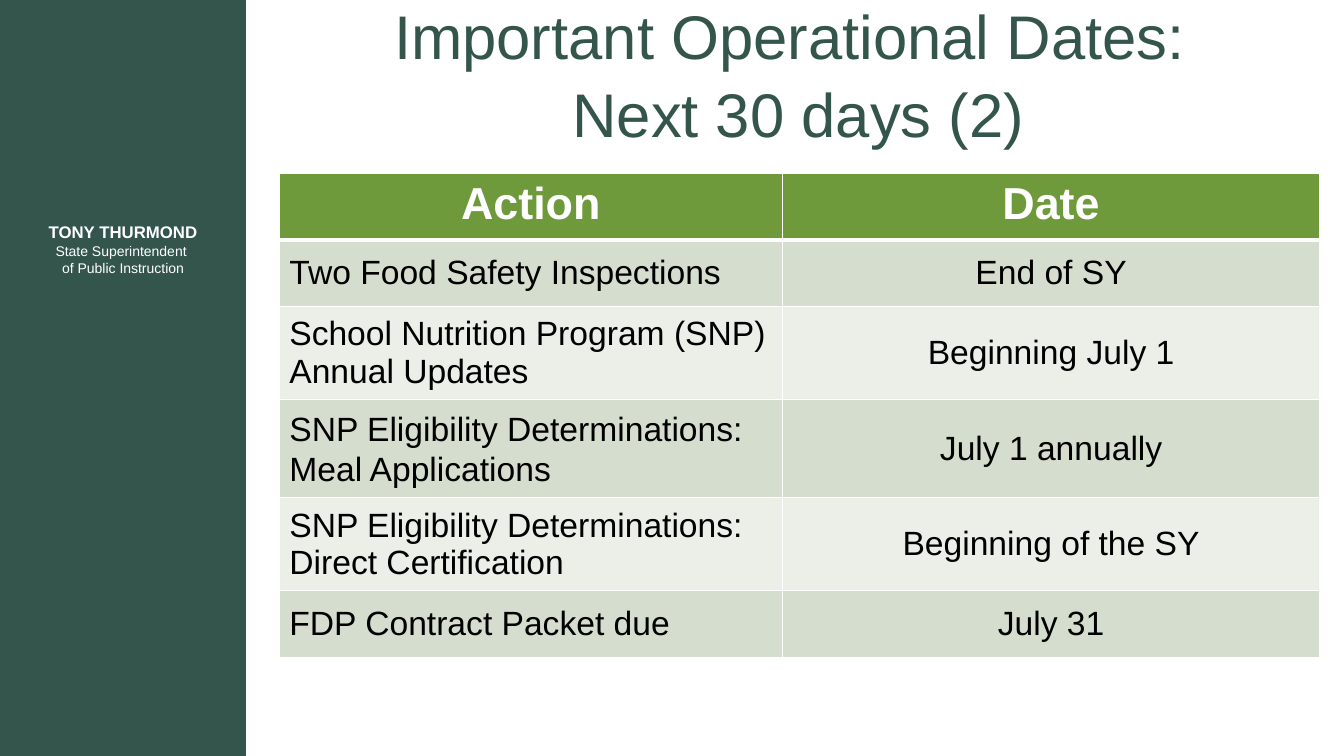
"""Build the slide of operational dates for the next 30 days."""
from dataclasses import dataclass

from lxml import etree
from pptx import Presentation
from pptx.dml.color import RGBColor
from pptx.enum import shapes, text
from pptx.oxml import ns
from pptx.util import Inches, Pt


@dataclass(frozen=True)
class Theme:
    font: str = "Arial"
    pine: str = "34554C"
    header: str = "6E9A3B"
    bands: tuple = ("D5DECE", "EBEFE8")
    white: str = "FFFFFF"
    black: str = "000000"
    title_size: int = 44
    header_size: int = 32
    body_size: int = 24
    name_size: int = 12
    role_size: int = 10


class SlideBuilder:
    def __init__(self, presentation, theme):
        self.theme = theme
        self.slide = presentation.slides.add_slide(presentation.slide_layouts[5])

    def add_lines(self, frame, lines, centered=True, spacing=1.0):
        frame.word_wrap = True
        paragraph = frame.paragraphs[0]
        paragraph.alignment = text.PP_ALIGN.CENTER if centered else text.PP_ALIGN.LEFT
        paragraph.line_spacing = spacing
        for index, (words, size, colour, bold) in enumerate(lines):
            if index:
                paragraph.add_line_break()
            run = paragraph.add_run()
            run.text = words
            run.font.name = self.theme.font
            run.font.size = Pt(size)
            run.font.bold = bold
            run.font.color.rgb = RGBColor.from_string(colour)

    def panel(self, left, top, width, height, colour):
        shape = self.slide.shapes.add_shape(
            shapes.MSO_SHAPE.RECTANGLE,
            Inches(left), Inches(top), Inches(width), Inches(height))
        shape.shadow.inherit = False
        shape.fill.solid()
        shape.fill.fore_color.rgb = RGBColor.from_string(colour)
        shape.line.fill.background()

    def label(self, left, top, width, height, lines):
        shape = self.slide.shapes.add_textbox(
            Inches(left), Inches(top), Inches(width), Inches(height))
        shape.text_frame.vertical_anchor = text.MSO_ANCHOR.MIDDLE
        self.add_lines(shape.text_frame, lines)

    def title(self, left, top, width, height, lines):
        shape = self.slide.shapes.title
        shape.left, shape.top = Inches(left), Inches(top)
        shape.width, shape.height = Inches(width), Inches(height)
        shape.text_frame.auto_size = text.MSO_AUTO_SIZE.NONE
        shape.text_frame.vertical_anchor = text.MSO_ANCHOR.MIDDLE
        self.add_lines(shape.text_frame, lines, spacing=1.05)

    def border(self, cell, bottom):
        properties = cell._tc.get_or_add_tcPr()
        for index, (side, width) in enumerate(
                (("lnL", 1), ("lnR", 1), ("lnT", 1), ("lnB", bottom))):
            line = etree.Element(ns.qn(f"a:{side}"), w=str(Pt(width)))
            fill = etree.SubElement(line, ns.qn("a:solidFill"))
            etree.SubElement(fill, ns.qn("a:srgbClr"), val=self.theme.white)
            properties.insert(index, line)

    def table(self, left, top, widths, heights, rows, loose_row):
        theme = self.theme
        table = self.slide.shapes.add_table(
            len(rows), len(widths), Inches(left), Inches(top),
            Inches(sum(widths)), Inches(sum(heights))).table
        table.horz_banding = False
        for column, width in zip(table.columns, widths):
            column.width = Inches(width)
        for index, (row, height, entries) in enumerate(zip(table.rows, heights, rows)):
            row.height = Inches(height)
            heading = index == 0
            for position, (cell, words) in enumerate(zip(row.cells, entries)):
                cell.fill.solid()
                cell.fill.fore_color.rgb = RGBColor.from_string(
                    theme.header if heading else theme.bands[(index - 1) % 2])
                self.border(cell, 3 if heading else 1)
                cell.vertical_anchor = (
                    text.MSO_ANCHOR.TOP if heading else text.MSO_ANCHOR.MIDDLE)
                style = ((theme.header_size, theme.white, True) if heading
                         else (theme.body_size, theme.black, False))
                loose = index == loose_row and position == 0
                self.add_lines(cell.text_frame, [(words, *style)],
                               centered=heading or position > 0,
                               spacing=1.07 if loose else 1.0)


def main():
    theme = Theme()
    presentation = Presentation()
    presentation.slide_width = Inches(13.33)
    presentation.slide_height = Inches(7.5)
    builder = SlideBuilder(presentation, theme)

    builder.panel(0, 0, 2.44, 7.5, theme.pine)
    builder.label(0.29, 2.09, 1.86, 0.76, [
        ("TONY THURMOND", theme.name_size, theme.white, True),
        ("State Superintendent ", theme.role_size, theme.white, False),
        ("of Public Instruction", theme.role_size, theme.white, False),
    ])
    builder.title(2.69, 0.13, 10.46, 1.17, [
        ("Important Operational Dates: ", theme.title_size, theme.pine, False),
        ("Next 30 days (2)", theme.title_size, theme.pine, False),
    ])
    builder.table(2.77, 1.72, [4.99, 5.33], [0.66, 0.66, 0.92, 0.98, 0.92, 0.66], [
        ("Action", "Date"),
        ("Two Food Safety Inspections", "End of SY"),
        ("School Nutrition Program (SNP) Annual Updates", "Beginning July 1"),
        ("SNP Eligibility Determinations: Meal Applications", "July 1 annually"),
        ("SNP Eligibility Determinations: Direct Certification", "Beginning of the SY"),
        ("FDP Contract Packet due", "July 31"),
    ], loose_row=3)
    presentation.save("out.pptx")


if __name__ == "__main__":
    main()
